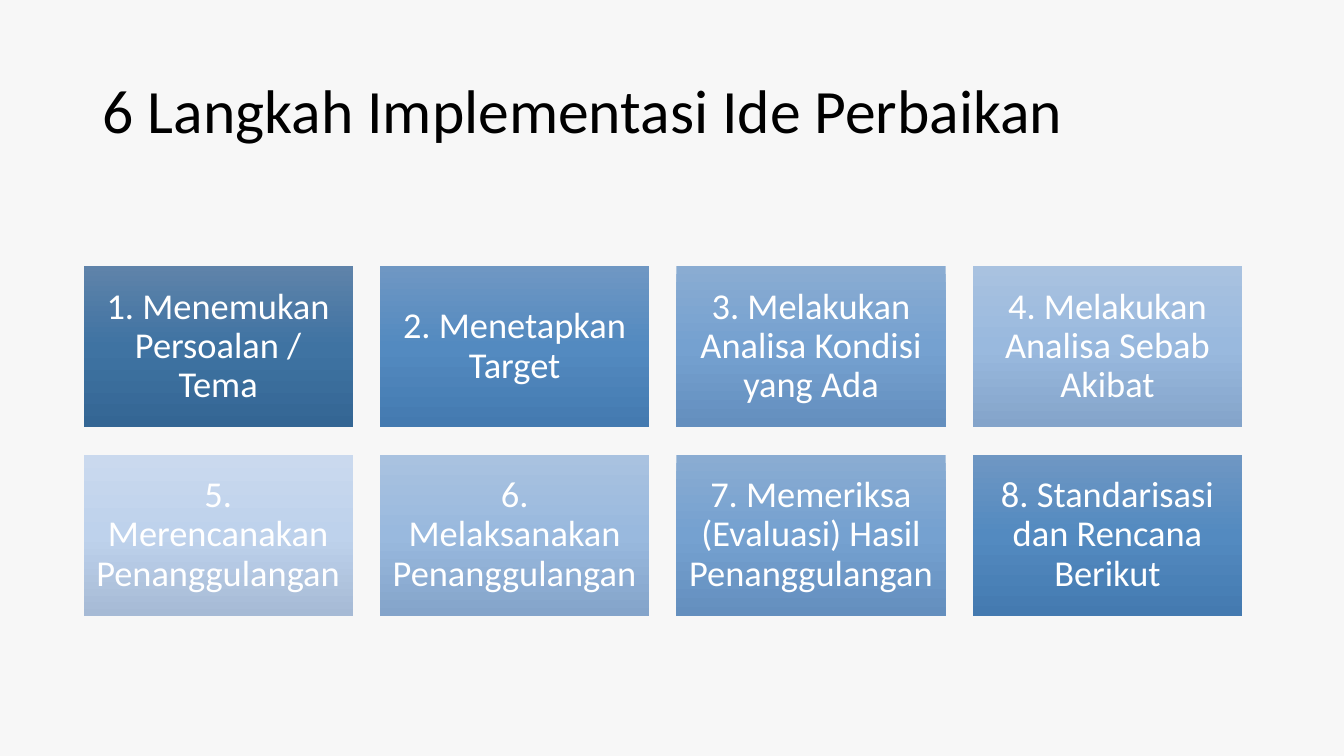
"""Build a slide with a title and a grid of numbered improvement steps."""
import copy
import dataclasses

import pptx
import pptx.dml.color
import pptx.enum.shapes
import pptx.enum.text
import pptx.util

Inches = pptx.util.Inches
Pt = pptx.util.Pt
RGB = pptx.dml.color.RGBColor.from_string
ALIGN = pptx.enum.text.PP_ALIGN
MIDDLE = pptx.enum.text.MSO_ANCHOR.MIDDLE


@dataclasses.dataclass(frozen=True)
class Theme:
    """Colours, font and type sizes of the slide."""
    font: str = "Calibri"
    title_size: int = 44
    step_size: int = 26
    background: str = "F7F7F7"
    title: str = "000000"
    step: str = "FFFFFF"
    shades: tuple = (
        ("5F83AA", "3F73A2", "346694"),
        ("6F97C3", "538AC0", "447AB0"),
        ("8AACD2", "75A1D0", "648FBE"),
        ("A9C2E0", "99B9DE", "84A4CA"),
        ("CAD9EE", "BED2EC", "A6BAD5"),
    )


THEME = Theme()
TITLE = "6 Langkah Implementasi Ide Perbaikan"
STEPS = (
    ("1. Menemukan Persoalan / Tema", 0),
    ("2. Menetapkan Target", 1),
    ("3. Melakukan Analisa Kondisi yang Ada", 2),
    ("4. Melakukan Analisa Sebab Akibat", 3),
    ("5. Merencanakan Penanggulangan", 4),
    ("6. Melaksanakan Penanggulangan", 3),
    ("7. Memeriksa (Evaluasi) Hasil Penanggulangan", 2),
    ("8. Standarisasi dan Rencana Berikut", 1),
)
TITLE_BOX = (0.92, 0.4, 11.5, 1.45)
GRID_BOX = (0.83, 2.64, 11.49, 3.47)
COLUMNS, ROWS, GAP = 4, 2, 0.27


def place(sp, box):
    """Move and size a shape to a box in inches."""
    sp.left, sp.top, sp.width, sp.height = map(Inches, box)


def write(sp, text, size, color, align):
    """Set and format the single paragraph of a shape."""
    tf = sp.text_frame
    tf.text = text
    tf.word_wrap = True
    tf.auto_size = pptx.enum.text.MSO_AUTO_SIZE.NONE
    tf.vertical_anchor = MIDDLE
    p = tf.paragraphs[0]
    p.alignment = align
    p.line_spacing = 0.9
    font = p.runs[0].font
    font.name = THEME.font
    font.size = Pt(size)
    font.color.rgb = RGB(color)


def shade(sp, colors):
    """Fill a shape from top to bottom with evenly spaced colours."""
    sp.fill.gradient()
    sp.fill.gradient_angle = 270
    first = sp._element.spPr.xpath("a:gradFill/a:gsLst/a:gs")[0]
    for _ in colors[2:]:
        first.addnext(copy.deepcopy(first))
    for i, (stop, color) in enumerate(zip(sp.fill.gradient_stops, colors)):
        stop.color.rgb = RGB(color)
        stop.position = i / (len(colors) - 1)


def add_title(s, box):
    """Place the slide title in the box."""
    place(s.shapes.title, box)
    write(s.shapes.title, TITLE, THEME.title_size, THEME.title, ALIGN.LEFT)


def add_step(s, box, text, colors):
    """Draw one step as a shaded rectangle."""
    sp = s.shapes.add_shape(
        pptx.enum.shapes.MSO_SHAPE.RECTANGLE, *map(Inches, box))
    sp.shadow.inherit = False
    sp.line.fill.background()
    shade(sp, colors)
    tf = sp.text_frame
    tf.margin_left = tf.margin_right = Inches(0.11)
    tf.margin_top = tf.margin_bottom = Inches(0.11)
    write(sp, text, THEME.step_size, THEME.step, ALIGN.CENTER)


def add_steps(s, box):
    """Lay the steps out in rows and columns within the box."""
    left, top, width, height = box
    w = (width - GAP * (COLUMNS - 1)) / COLUMNS
    h = (height - GAP * (ROWS - 1)) / ROWS
    for i, (text, tone) in enumerate(STEPS):
        row, col = divmod(i, COLUMNS)
        cell = (left + col * (w + GAP), top + row * (h + GAP), w, h)
        add_step(s, cell, text, THEME.shades[tone])


def main():
    """Create and save the presentation."""
    prs = pptx.Presentation()
    prs.slide_width, prs.slide_height = Inches(13.33), Inches(7.5)
    s = prs.slides.add_slide(prs.slide_layouts.get_by_name("Title Only"))
    s.background.fill.solid()
    s.background.fill.fore_color.rgb = RGB(THEME.background)
    add_title(s, TITLE_BOX)
    add_steps(s, GRID_BOX)
    prs.save("out.pptx")


if __name__ == "__main__":
    main()
